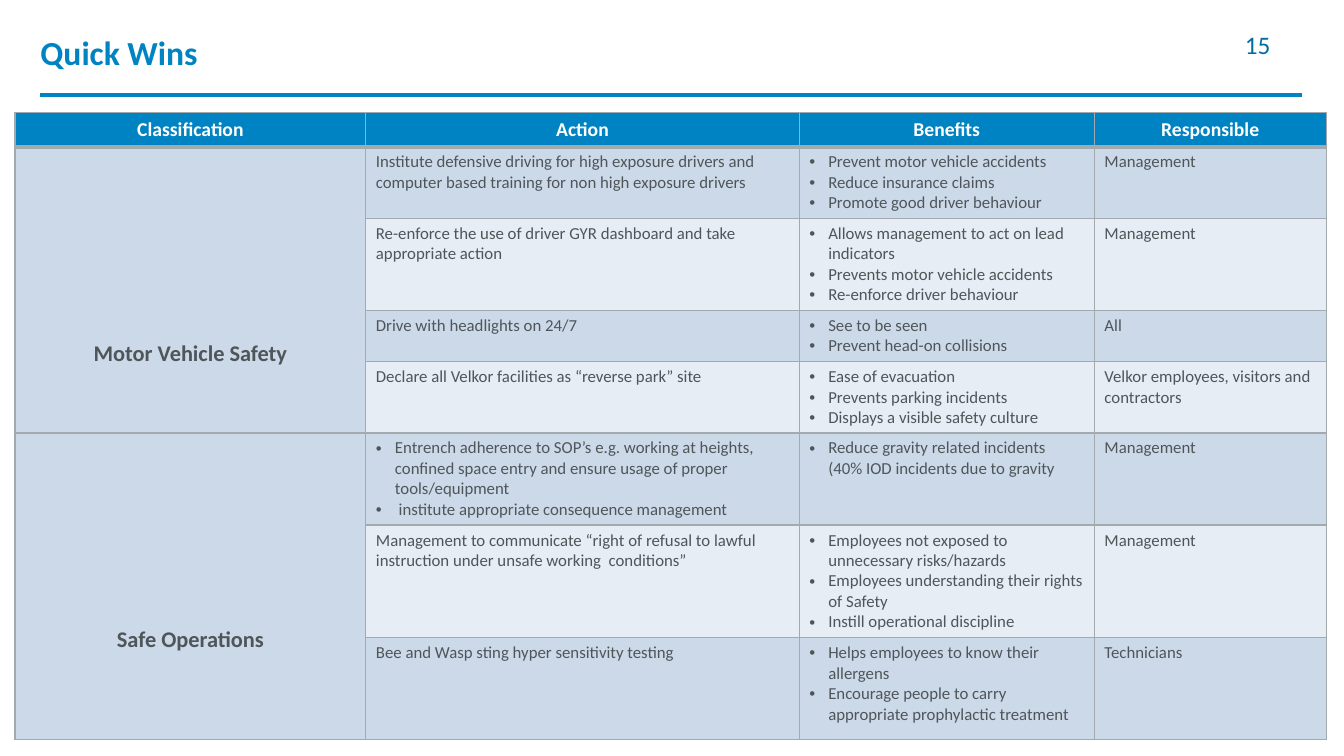
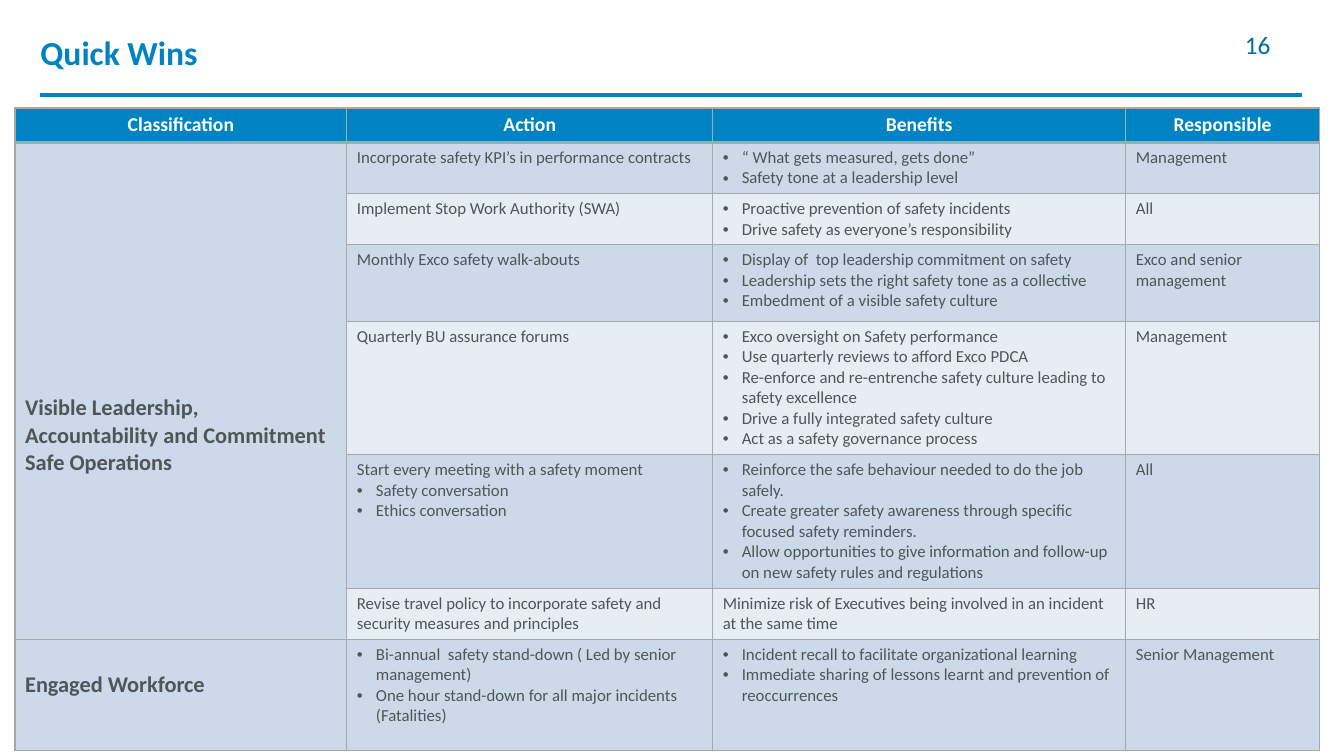
"""Builds two "Quick Wins" slides that list safety actions in a table."""
from lxml.etree import SubElement as Sub
from pptx import Presentation
from pptx.dml.color import RGBColor as Rgb
from pptx.enum.shapes import MSO_CONNECTOR as Connector, MSO_SHAPE as Shape
from pptx.enum.text import MSO_ANCHOR as Anchor, MSO_AUTO_SIZE as AutoSize, PP_ALIGN as Align
from pptx.oxml.ns import qn
from pptx.util import Cm, Pt

COLOURS = {
    "brand": "0083C2", "number": "006DA3", "white": "FFFFFF", "text": "4E5659",
    "border": "A2AAAD", "dark band": "CCD9E9", "light band": "E7EDF4",
}
FONTS = {
    "title": {"size": Pt(24), "bold": True, "colour": "brand"},
    "number": {"size": Pt(18), "bold": False, "colour": "number"},
    "heading": {"size": Pt(14), "bold": True, "colour": "white"},
    "group": {"size": Pt(16), "bold": True, "colour": "text"},
    "body": {"size": Pt(12), "bold": False, "colour": "text"},
}
TITLE_BOX = {"left": Cm(1.02), "top": Cm(0.81), "width": Cm(31.78), "height": Cm(1.14)}
TITLE_FRAME = {"margin_left": 0, "margin_top": 0, "margin_right": 0, "margin_bottom": 0,
               "vertical_anchor": Anchor.MIDDLE, "auto_size": AutoSize.NONE}
NUMBER_FRAME = {"word_wrap": False, "auto_size": AutoSize.SHAPE_TO_FIT_TEXT}
HEADINGS = ["Classification", "Action", "Benefits", "Responsible"]
BULLET = "• "
HANG = Cm(0.48)
THIN, THICK = Pt(1), Pt(3)


def apply(target, values):
    """Set every attribute in the dict on the target."""
    for name, value in values.items():
        setattr(target, name, value)


def rgb(name):
    """Return the named colour."""
    return Rgb.from_string(COLOURS[name])


class Deck:
    """Holds the presentation, its style and the current slide."""

    def __init__(self):
        """Open a wide presentation."""
        self.prs = Presentation()
        apply(self.prs, {"slide_width": Cm(33.87), "slide_height": Cm(19.05)})
        self.slide = None

    def put_text(self, frame, text, style, align=Align.LEFT):
        """Fill a text frame, one paragraph a line, with hanging bullets."""
        frame.text = text
        for paragraph in frame.paragraphs:
            paragraph.alignment = align
            if paragraph.text.startswith(BULLET):
                run = paragraph.runs[0]
                run.text = run.text.removeprefix(BULLET)
                props = paragraph._p.get_or_add_pPr()
                props.set("marL", str(HANG))
                props.set("indent", str(-HANG))
                Sub(props, qn("a:buFont"), typeface="Arial")
                Sub(props, qn("a:buChar"), char=BULLET.strip())
            for run in paragraph.runs:
                font = FONTS[style]
                apply(run.font, {"name": "Calibri", "size": font["size"], "bold": font["bold"]})
                run.font.color.rgb = rgb(font["colour"])

    def start(self, title, number):
        """Add a slide with its title, rule and page number."""
        self.slide = self.prs.slides.add_slide(self.prs.slide_layouts[5])
        self.rule()
        heading = self.slide.shapes.title
        apply(heading, TITLE_BOX)
        apply(heading.text_frame, TITLE_FRAME)
        self.put_text(heading.text_frame, title, "title")
        heading.text_frame.paragraphs[0].line_spacing = 0.9
        self.page_number(number)

    def rule(self):
        """Draw the line under the title."""
        left, y = TITLE_BOX["left"], Cm(2.39)
        line = self.slide.shapes.add_connector(
            Connector.STRAIGHT, left, y, left + TITLE_BOX["width"], y)
        line.line.color.rgb = rgb("brand")
        line.line.width = Pt(2.5)
        Sub(line._element.spPr, qn("a:effectLst"))

    def page_number(self, number):
        """Put the page number at the top right."""
        box = self.slide.shapes.add_shape(
            Shape.RECTANGLE, Cm(31.12), Cm(0.61), Cm(1.17), Cm(1.02))
        box.shadow.inherit = False
        box.fill.solid()
        box.fill.fore_color.rgb = rgb("white")
        box.line.color.rgb = rgb("white")
        box.line.width = Pt(2)
        apply(box.text_frame, NUMBER_FRAME)
        self.put_text(box.text_frame, str(number), "number")

    def paint(self, cell, fill, top=THIN, bottom=THIN):
        """Give a cell its borders and fill."""
        props = cell._tc.get_or_add_tcPr()
        for side, width in {"L": THIN, "R": THIN, "T": top, "B": bottom}.items():
            edge = Sub(props, qn(f"a:ln{side}"), w=str(width))
            Sub(Sub(edge, qn("a:solidFill")), qn("a:srgbClr"), val=COLOURS["border"])
        cell.fill.solid()
        cell.fill.fore_color.rgb = rgb(fill)

    def actions(self, top, widths, heights, groups, group_align):
        """Add the table: each group has a label, its offset and its rows."""
        table = self.slide.shapes.add_table(
            len(heights), len(widths), Cm(0.38), Cm(top),
            Cm(sum(widths)), Cm(sum(heights))).table
        table.horz_banding = False
        for column, width in zip(table.columns, widths):
            column.width = Cm(width)
        for line, height in zip(table.rows, heights):
            line.height = Cm(height)
        for column, heading in enumerate(HEADINGS):
            cell = table.cell(0, column)
            self.paint(cell, "brand", bottom=THICK)
            self.put_text(cell.text_frame, heading, "heading", Align.CENTER)
        row = 1
        for label, offset, entries in groups:
            group = table.cell(row, 0)
            if len(entries) > 1:
                group.merge(table.cell(row + len(entries) - 1, 0))
            group.margin_top = Cm(offset)
            self.put_text(group.text_frame, label, "group", group_align)
            for entry in entries:
                edge = THICK if row == 1 else THIN
                self.paint(table.cell(row, 0), "dark band", top=edge)
                for column, text in enumerate(entry, 1):
                    cell = table.cell(row, column)
                    self.paint(cell, "dark band" if row % 2 else "light band", top=edge)
                    self.put_text(cell.text_frame, text, "body")
                row += 1


OPERATIONS = [
    ("Motor Vehicle Safety", 4.88, [
        ("Institute defensive driving for high exposure drivers and computer based training "
         "for non high exposure drivers",
         "• Prevent motor vehicle accidents\n• Reduce insurance claims\n"
         "• Promote good driver behaviour",
         "Management"),
        ("Re-enforce the use of driver GYR dashboard and take appropriate action",
         "• Allows management to act on lead indicators\n"
         "• Prevents motor vehicle accidents\n• Re-enforce driver behaviour",
         "Management"),
        ("Drive with headlights on 24/7",
         "• See to be seen\n• Prevent head-on collisions",
         "All"),
        ("Declare all Velkor facilities as “reverse park” site",
         "• Ease of evacuation\n• Prevents parking incidents\n"
         "• Displays a visible safety culture",
         "Velkor employees, visitors and contractors"),
    ]),
    ("Safe Operations", 4.88, [
        ("• Entrench adherence to SOP’s e.g. working at heights, confined space entry and "
         "ensure usage of proper tools/equipment\n"
         "•  institute appropriate consequence management",
         "• Reduce gravity related incidents  (40% IOD incidents due to gravity",
         "Management"),
        ("Management to communicate “right of refusal to lawful instruction under unsafe "
         "working  conditions”",
         "• Employees not exposed to unnecessary risks/hazards\n"
         "• Employees understanding their rights of Safety\n"
         "• Instill operational discipline",
         "Management"),
        ("Bee and Wasp sting hyper sensitivity testing",
         "• Helps employees to know their allergens\n"
         "• Encourage people to carry appropriate prophylactic treatment",
         "Technicians"),
    ]),
]
LEADERSHIP = [
    ("Visible Leadership, Accountability and Commitment\nSafe Operations", 6.35, [
        ("Incorporate safety KPI’s in performance contracts",
         "• “ What gets measured, gets done”\n• Safety tone at a leadership level",
         "Management"),
        ("Implement Stop Work Authority (SWA)",
         "• Proactive prevention of safety incidents\n"
         "• Drive safety as everyone’s responsibility",
         "All"),
        ("Monthly Exco safety walk-abouts",
         "• Display of  top leadership commitment on safety\n"
         "• Leadership sets the right safety tone as a collective\n"
         "• Embedment of a visible safety culture",
         "Exco and senior management"),
        ("Quarterly BU assurance forums",
         "• Exco oversight on Safety performance\n"
         "• Use quarterly reviews to afford Exco PDCA\n"
         "• Re-enforce and re-entrenche safety culture leading to safety excellence\n"
         "• Drive a fully integrated safety culture\n"
         "• Act as a safety governance process",
         "Management"),
        ("Start every meeting with a safety moment\n"
         "• Safety conversation\n• Ethics conversation",
         "• Reinforce the safe behaviour needed to do the job safely.\n"
         "• Create greater safety awareness through specific focused safety reminders.\n"
         "• Allow opportunities to give information and follow-up on new safety rules "
         "and regulations",
         "All"),
        ("Revise travel policy to incorporate safety and security measures and principles",
         "Minimize risk of Executives being involved in an incident at the same time",
         "HR"),
    ]),
    ("Engaged Workforce", 0.81, [
        ("• Bi-annual  safety stand-down ( Led by senior management)\n"
         "• One hour stand-down for all major incidents (Fatalities)",
         "• Incident recall to facilitate organizational learning\n"
         "• Immediate sharing of lessons learnt and prevention of reoccurrences",
         "Senior Management"),
    ]),
]


def main():
    """Build and save both slides."""
    deck = Deck()
    deck.start("Quick Wins", 15)
    deck.actions(2.84, [8.84, 10.92, 7.44, 5.84],
                 [0.86, 1.8, 2.32, 1.29, 1.8, 2.32, 2.84, 2.57], OPERATIONS, Align.CENTER)
    deck.start("Quick Wins", 16)
    deck.actions(2.72, [8.36, 9.22, 10.41, 4.88],
                 [0.87, 1.29, 1.29, 1.93, 3.36, 3.36, 1.29, 2.81], LEADERSHIP, Align.LEFT)
    deck.prs.save("out.pptx")


if __name__ == "__main__":
    main()
